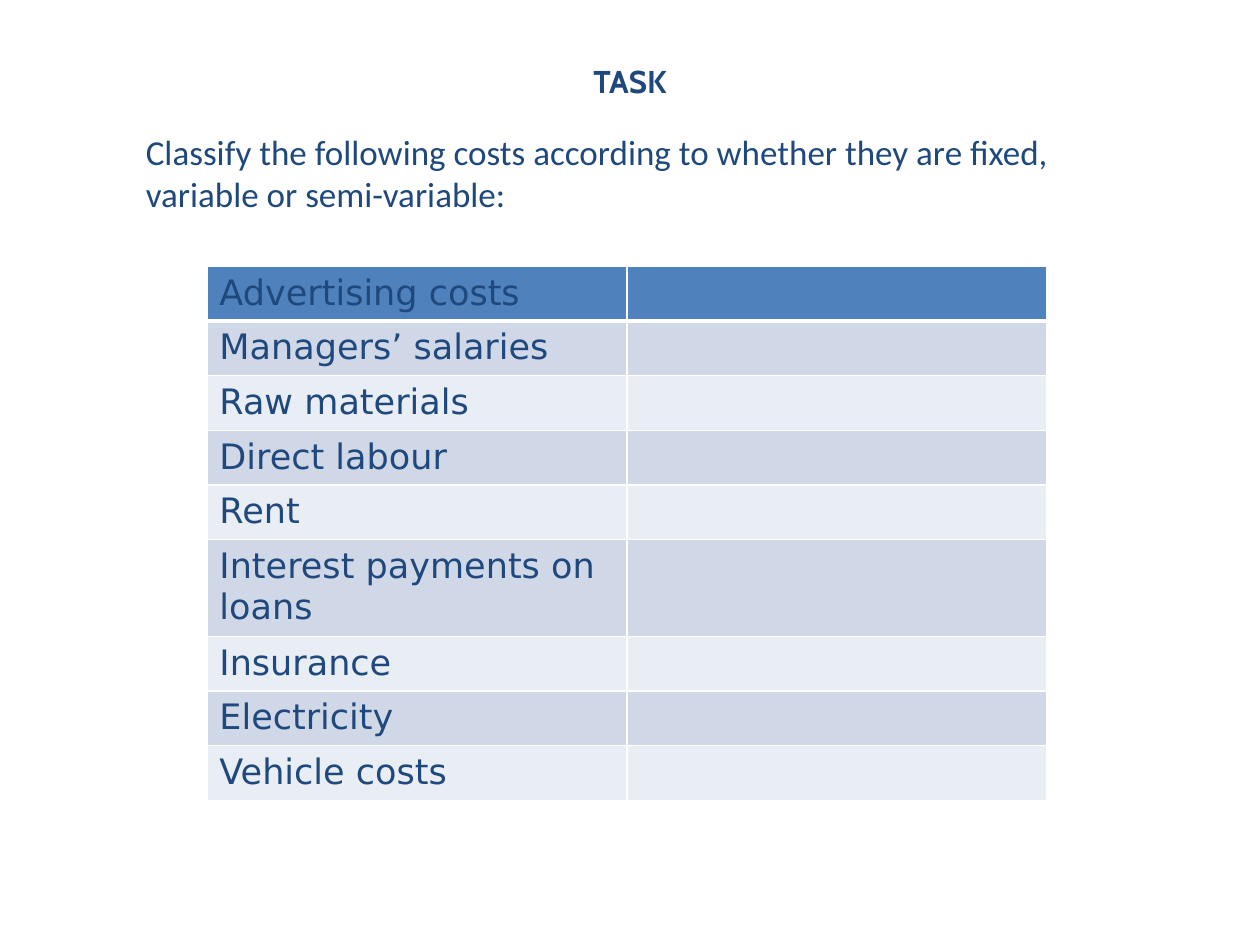
from dataclasses import dataclass

from lxml import etree
from pptx import Presentation
from pptx import util as u
from pptx.dml.color import RGBColor
from pptx.enum import text
from pptx.oxml.ns import qn


@dataclass(frozen=True)
class Theme:
    ink: str = "1F497D"
    header: str = "4F81BD"
    bands: tuple[str, str] = ("D0D8E8", "E9EDF4")
    border: str = "FFFFFF"
    title_size: int = 18
    body_size: int = 20
    title_font: str = "Cabin"
    body_font: str = "Calibri"
    table_font: str = "DejaVu Sans"
    border_width: int = 1
    header_rule: int = 3


@dataclass(frozen=True)
class TextBlock:
    words: str
    left: float
    top: float
    width: float
    height: float
    font: str
    size: int
    align: text.PP_ALIGN
    bold: bool = False


@dataclass(frozen=True)
class CostRow:
    name: str
    height: float = 1.1


THEME = Theme()
BLOCKS = (
    TextBlock("Classify the following costs according to whether they are fixed, "
              "variable or semi-variable:", 2.69, 2.51, 20.57, 1.96,
              THEME.body_font, THEME.body_size, text.PP_ALIGN.LEFT),
    TextBlock("TASK", 3.3, 1.12, 18.8, 1.27,
              THEME.title_font, THEME.title_size, text.PP_ALIGN.CENTER, True),
)
COSTS = (
    CostRow("Advertising costs"),
    CostRow("Managers’ salaries"),
    CostRow("Raw materials"),
    CostRow("Direct labour"),
    CostRow("Rent"),
    CostRow("Interest payments on loans", 1.93),
    CostRow("Insurance"),
    CostRow("Electricity"),
    CostRow("Vehicle costs"),
)


def add_run(p, words: str, font: str, size: int, bold: bool = False) -> None:
    r = p.add_run()
    r.text = words
    r.font.name = font
    r.font.size = u.Pt(size)
    r.font.bold = bold
    r.font.color.rgb = RGBColor.from_string(THEME.ink)


def add_block(s, block: TextBlock) -> None:
    sp = s.shapes.add_textbox(u.Cm(block.left), u.Cm(block.top),
                              u.Cm(block.width), u.Cm(block.height))
    tf = sp.text_frame
    tf.word_wrap = True
    p = tf.paragraphs[0]
    p.alignment = block.align
    add_run(p, block.words, block.font, block.size, block.bold)


def style_cell(cell, fill: str, bottom: int) -> None:
    tc_pr = cell._tc.get_or_add_tcPr()
    for side in "LRTB":
        width = bottom if side == "B" else THEME.border_width
        ln = etree.SubElement(tc_pr, qn(f"a:ln{side}"), w=str(u.Pt(width)))
        solid = etree.SubElement(ln, qn("a:solidFill"))
        etree.SubElement(solid, qn("a:srgbClr"), val=THEME.border)
    cell.fill.solid()
    cell.fill.fore_color.rgb = RGBColor.from_string(fill)


def add_cost_table(s, costs: tuple[CostRow, ...]) -> None:
    height = sum(cost.height for cost in costs)
    table = s.shapes.add_table(len(costs), 2, u.Cm(4.17), u.Cm(5.37),
                               u.Cm(16.93), u.Cm(height)).table
    for i, (row, cost) in enumerate(zip(table.rows, costs)):
        row.height = u.Cm(cost.height)
        fill = THEME.bands[(i - 1) % 2] if i else THEME.header
        bottom = THEME.border_width if i else THEME.header_rule
        for cell in row.cells:
            style_cell(cell, fill, bottom)
        p = row.cells[0].text_frame.paragraphs[0]
        add_run(p, cost.name, THEME.table_font, THEME.body_size)


def main() -> None:
    prs = Presentation()
    prs.slide_width, prs.slide_height = u.Cm(25.4), u.Cm(19.05)
    s = prs.slides.add_slide(prs.slide_layouts[6])
    for block in BLOCKS:
        add_block(s, block)
    add_cost_table(s, COSTS)
    prs.save("out.pptx")


if __name__ == "__main__":
    main()
